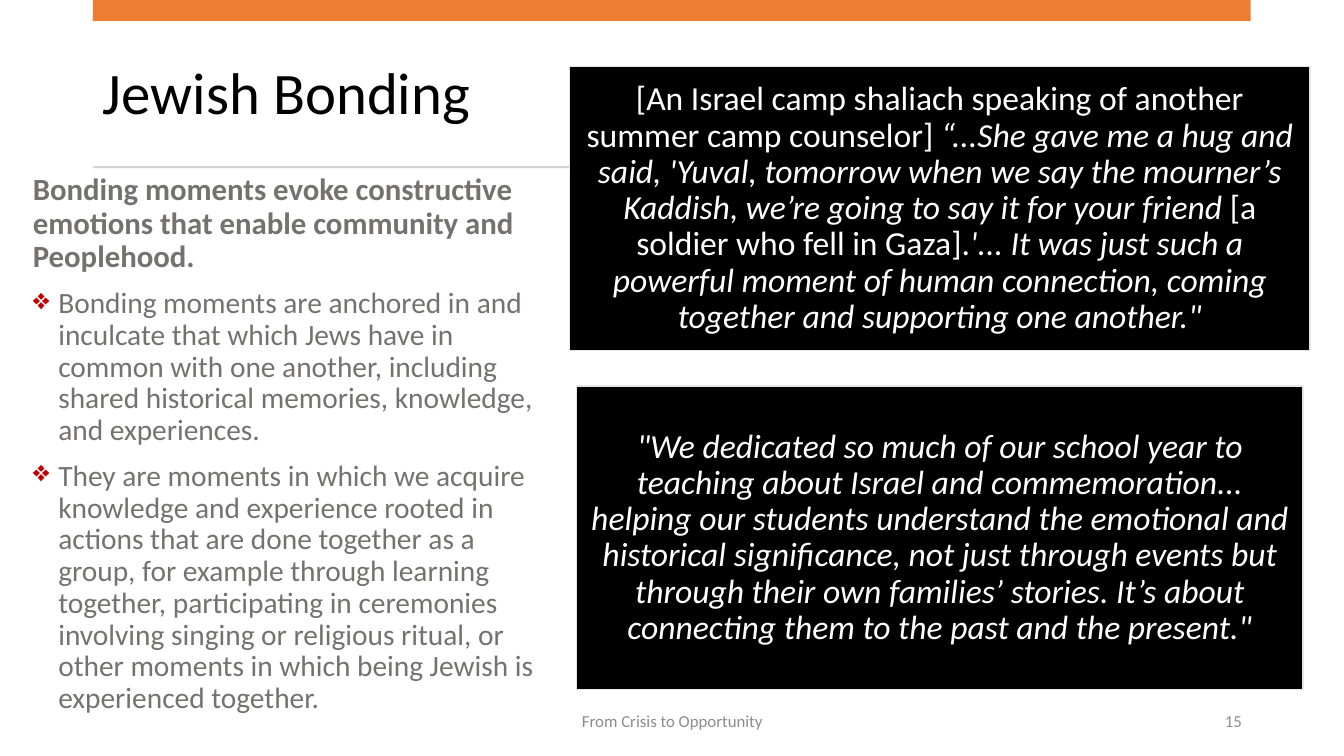
from lxml import etree
from pptx import Presentation
from pptx.dml.color import RGBColor
from pptx.enum import shapes, text
from pptx.oxml import ns
from pptx.util import Cm, Pt

BLACK = RGBColor(0x00, 0x00, 0x00)
WHITE = RGBColor(0xFF, 0xFF, 0xFF)
ORANGE = RGBColor(0xED, 0x7D, 0x31)
RULE_GRAY = RGBColor(0xD5, 0xD5, 0xD5)
FOOTER_GRAY = RGBColor(0x8C, 0x8C, 0x8C)
BODY_GRAY = RGBColor(0x76, 0x71, 0x71)
FRAME_GRAY = RGBColor(0xE7, 0xE6, 0xE6)
RED = RGBColor(0xC0, 0x00, 0x00)

FONT = "Calibri"
BULLET = "❖"
LINE_SPACING = 0.9
MARGIN_LEFT, BAND_WIDTH = 2.34, 29.18

HEADING = "Jewish Bonding"
HEADING_BOX = (MARGIN_LEFT, 0.89, 28.32, 3.02)

BANDS = [
    ((MARGIN_LEFT, 0, BAND_WIDTH, 0.53), ORANGE),
    ((MARGIN_LEFT, 4.19, BAND_WIDTH, 0.05), RULE_GRAY),
]

FOOTERS = [
    ("15", (23.93, 17.65, 7.62, 1.02), text.PP_ALIGN.RIGHT),
    ("From Crisis to Opportunity", (11.23, 17.65, 11.43, 1.02), text.PP_ALIGN.CENTER),
]

BODY_BOX = (0.58, 4.27, 13.16, 11.13)
LEAD = "Bonding moments evoke constructive emotions that enable community and Peoplehood."
POINTS = [
    "Bonding moments are anchored in and inculcate that which Jews have in common with "
    "one another, including shared historical memories, knowledge, and experiences.",
    "They are moments in which we acquire knowledge and experience rooted in actions that "
    "are done together as a group, for example through learning together, participating in "
    "ceremonies involving singing or religious ritual, or other moments in which being "
    "Jewish is experienced together.",
]

QUOTES = [
    ((14.35, 1.68, 18.67, 7.16), [
        ("[An Israel camp shaliach speaking of another summer camp counselor] ", False),
        ("“...She gave me a hug and said, 'Yuval, tomorrow when we say the mourner’s "
         "Kaddish, we’re going to say it for your friend ", True),
        ("[a soldier who fell in Gaza].", False),
        ("'... It was just such a powerful moment of human connection, coming together "
         "and supporting one another.\"", True),
    ]),
    ((14.53, 9.73, 18.31, 7.65), [
        ("\"We dedicated so much of our school year to teaching about Israel and "
         "commemoration... helping our students understand the emotional and historical "
         "significance, not just through events but through their own families’ stories. "
         "It’s about connecting them to the past and the present.\"", True),
    ]),
]


def cm(box):
    return [Cm(length) for length in box]


def style(paragraph, size, color, align=text.PP_ALIGN.LEFT, bold=False):
    paragraph.alignment = align
    font = paragraph.font
    font.name, font.size, font.bold = FONT, Pt(size), bold
    font.color.rgb = color


def add_rectangle(slide, box, color):
    rectangle = slide.shapes.add_shape(shapes.MSO_SHAPE.RECTANGLE, *cm(box))
    rectangle.shadow.inherit = False
    rectangle.fill.solid()
    rectangle.fill.fore_color.rgb = color
    rectangle.line.fill.background()
    return rectangle


def add_frame(slide, box):
    frame = slide.shapes.add_textbox(*cm(box)).text_frame
    frame.word_wrap = True
    return frame


def add_bullet(paragraph):
    properties = paragraph._p.get_or_add_pPr()
    properties.set("marL", str(Cm(0.64)))
    properties.set("indent", str(Cm(-0.64)))
    color = etree.SubElement(properties, ns.qn("a:buClr"))
    etree.SubElement(color, ns.qn("a:srgbClr"), val=str(RED))
    etree.SubElement(properties, ns.qn("a:buChar"), char=BULLET)


def add_heading(slide):
    title = slide.shapes.title
    title.left, title.top, title.width, title.height = cm(HEADING_BOX)
    frame = title.text_frame
    frame.text = HEADING
    frame.vertical_anchor = text.MSO_ANCHOR.MIDDLE
    frame.auto_size = text.MSO_AUTO_SIZE.NONE
    style(frame.paragraphs[0], 42, BLACK)
    frame.paragraphs[0].line_spacing = LINE_SPACING


def add_body(slide):
    frame = add_frame(slide, BODY_BOX)
    frame.text = "\n".join([LEAD, *POINTS])
    lead, *points = frame.paragraphs
    style(lead, 22, BODY_GRAY, bold=True)
    for point in points:
        style(point, 21, BODY_GRAY)
    for paragraph in frame.paragraphs:
        paragraph.line_spacing = LINE_SPACING
        paragraph.space_before = Pt(10)
    for point in points:
        add_bullet(point)


def add_quote(slide, box, passages):
    panel = add_rectangle(slide, box, BLACK)
    panel.line.color.rgb = FRAME_GRAY
    panel.line.width = Pt(1)
    frame = panel.text_frame
    frame.word_wrap = True
    frame.vertical_anchor = text.MSO_ANCHOR.MIDDLE
    frame.margin_left = frame.margin_right = Cm(0.25)
    frame.margin_top = frame.margin_bottom = Cm(0.25)
    quote = frame.paragraphs[0]
    style(quote, 24, WHITE, text.PP_ALIGN.CENTER)
    quote.line_spacing = LINE_SPACING
    for words, italic in passages:
        run = quote.add_run()
        run.text = words
        run.font.italic = italic


def main():
    deck = Presentation()
    deck.slide_width, deck.slide_height = Cm(33.87), Cm(19.05)
    slide = deck.slides.add_slide(deck.slide_layouts[5])
    add_heading(slide)
    for box, color in BANDS:
        add_rectangle(slide, box, color)
    for words, box, align in FOOTERS:
        frame = add_frame(slide, box)
        frame.text = words
        frame.vertical_anchor = text.MSO_ANCHOR.MIDDLE
        style(frame.paragraphs[0], 12, FOOTER_GRAY, align)
    add_body(slide)
    for box, passages in QUOTES:
        add_quote(slide, box, passages)
    deck.save("out.pptx")


if __name__ == "__main__":
    main()
